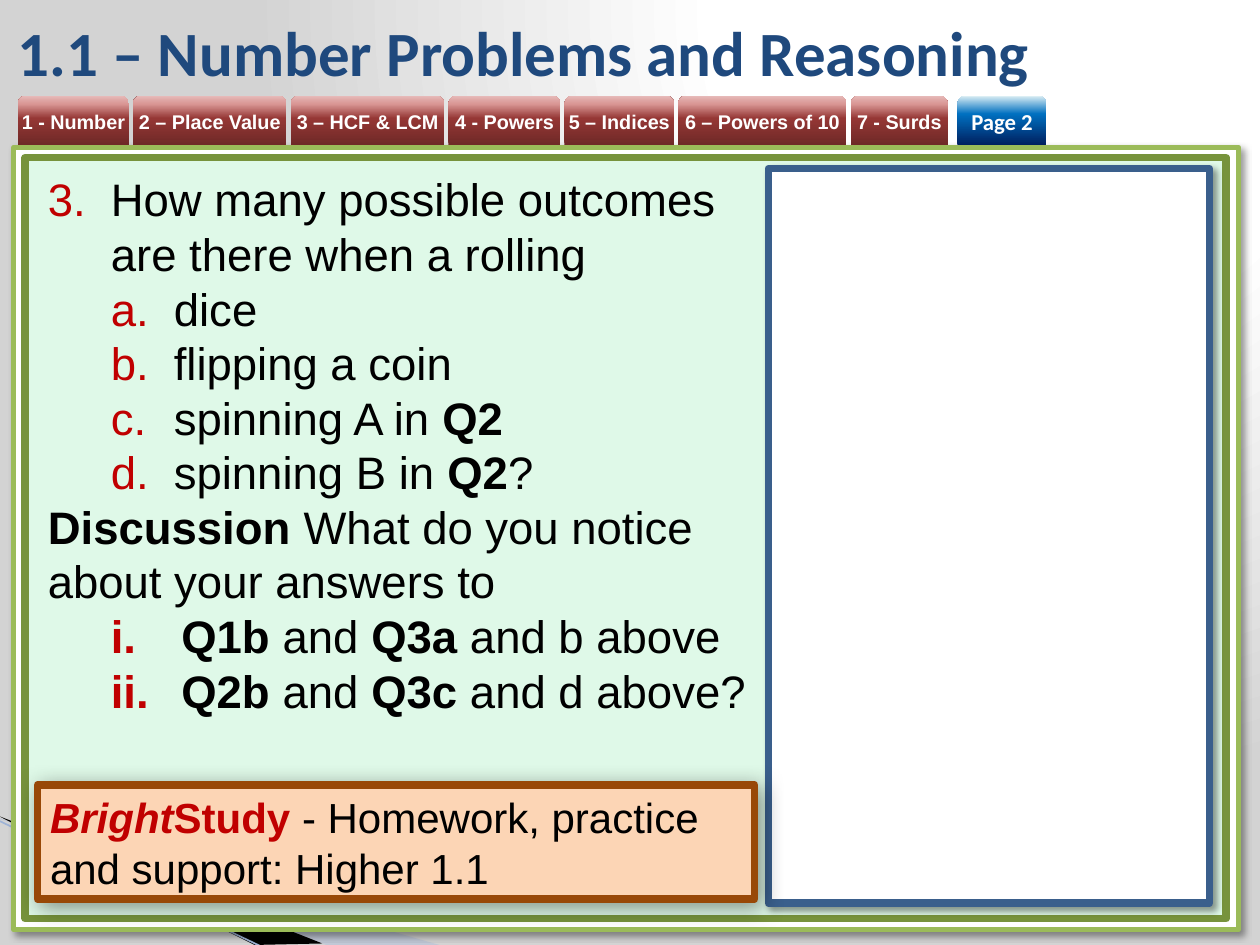
from lxml.etree import SubElement
from pptx import Presentation
from pptx.dml.color import RGBColor
from pptx.enum.shapes import MSO_CONNECTOR, MSO_SHAPE
from pptx.enum.text import MSO_ANCHOR, MSO_AUTO_SIZE, PP_ALIGN
from pptx.oxml.ns import qn
from pptx.util import Cm, Pt

WHITE = RGBColor(0xFF, 0xFF, 0xFF)
BLACK = RGBColor(0x00, 0x00, 0x00)
NAVY = RGBColor(0x1F, 0x49, 0x7D)
RED = RGBColor(0xC0, 0x00, 0x00)
LIME = RGBColor(0x9B, 0xBB, 0x59)
OLIVE = RGBColor(0x77, 0x93, 0x3C)
MINT = RGBColor(0xDF, 0xF9, 0xE8)
STEEL = RGBColor(0x3A, 0x5F, 0x8C)
PEACH = RGBColor(0xFC, 0xD5, 0xB5)
BROWN = RGBColor(0x98, 0x48, 0x07)
PALE_BLUE = RGBColor(0xA7, 0xB9, 0xDB)
LINE_BLUE = RGBColor(0x9E, 0xB3, 0xD6)
GREY = RGBColor(0xD3, 0xD3, 0xD3)
BACKDROP = [(0, WHITE), (40, WHITE), (100, GREY)]
RED_TAB = [(0, RGBColor(0x6F, 0x29, 0x27)), (54, RGBColor(0x95, 0x37, 0x35)),
           (83, RGBColor(0xD9, 0x96, 0x94)), (100, RGBColor(0xE6, 0xB9, 0xB8))]
BLUE_TAB = [(0, RGBColor(0x00, 0x20, 0x60)), (63, RGBColor(0x00, 0x70, 0xC0)),
            (100, RGBColor(0xDB, 0xEE, 0xF4))]

TITLE = "1.1 – Number Problems and Reasoning"
# Label and width in cm
TABS = [("1 - Number", 2.24), ("2 – Place Value", 3.1), ("3 – HCF & LCM", 3.1),
        ("4 - Powers", 2.26), ("5 – Indices", 2.21), ("6 – Powers of 10", 3.4),
        ("7 - Surds", 1.96)]
TAB_LEFT, TAB_TOP, TAB_HEIGHT, TAB_GAP = 0.36, 1.93, 0.99, 0.08
# Box in cm, fill, line colour, line width, shadow
FRAMES = [((0.28, 2.97, 24.69, 15.77), WHITE, LIME, 3, True),
          ((0.51, 3.18, 24.21, 15.34), MINT, OLIVE, 4.33, False),
          ((15.49, 3.4, 8.89, 14.81), WHITE, STEEL, 4.33, True)]
# List styles: level, left margin and hanging indent in cm, numbering, first number
QUESTION = (0, 1.27, 1.27, "arabicPeriod", 3)
PART = (1, 2.54, 1.27, "alphaLcPeriod", 1)
ROMAN = (1, 2.69, 1.42, "romanLcPeriod", 1)
PLAIN = (0, 0, 0, None, None)
# Style, then runs as (text, bold)
BODY = [
    (QUESTION, [("How many possible outcomes are there when a rolling", False)]),
    (PART, [("dice", False)]),
    (PART, [("flipping a coin", False)]),
    (PART, [("spinning A in ", False), ("Q2", True)]),
    (PART, [("spinning B in ", False), ("Q2", True), ("?", False)]),
    (PLAIN, [("Discussion", True), (" What do you notice about your answers to", False)]),
    (ROMAN, [("Q1b ", True), ("and ", False), ("Q3a", True), (" and b above", False)]),
    (ROMAN, [("Q2b ", True), ("and ", False), ("Q3c", True), (" and d above?", False)]),
]
TAB_STOPS = (2.39, 7.62)
# Text, colour, bold, italic
HOMEWORK = [("Bright", RED, True, True), ("Study ", RED, True, False),
            ("- Homework, practice and support: Higher 1.1", BLACK, False, False)]


def cm_box(box):
    return [Cm(v) for v in box]


def set_gradient(fill, element, stops, focus=None):
    """Fill upwards through the stops, or outwards from a focus rectangle."""
    fill.gradient()
    grad = element.find(".//" + qn("a:gradFill"))
    for child in list(grad):
        grad.remove(child)
    gs_list = SubElement(grad, qn("a:gsLst"))
    for pos, color in stops:
        gs = SubElement(gs_list, qn("a:gs"), pos=str(pos * 1000))
        SubElement(gs, qn("a:srgbClr"), val=str(color))
    if focus:
        way = SubElement(grad, qn("a:path"), {"path": "circle"})
        SubElement(way, qn("a:fillToRect"), {k: str(v * 1000) for k, v in focus.items()})
    else:
        SubElement(grad, qn("a:lin"), ang="16200000", scaled="0")


def add_shadow(sp, blur):
    effects = sp.element.spPr.find(qn("a:effectLst"))
    shadow = SubElement(effects, qn("a:outerShdw"), blurRad=str(Pt(blur)),
                        dist=str(Pt(3)), dir="2700000", algn="tl", rotWithShape="0")
    color = SubElement(shadow, qn("a:srgbClr"), val=str(BLACK))
    SubElement(color, qn("a:alpha"), val="40000")


def add_run(p, text, font, size, color, bold=False, italic=False):
    r = p.add_run()
    r.text = text
    r.font.name, r.font.size = font, Pt(size)
    r.font.bold, r.font.italic = bold, italic
    r.font.color.rgb = color


def add_frame(s, box, fill, line, width):
    sp = s.shapes.add_shape(MSO_SHAPE.RECTANGLE, *cm_box(box))
    sp.shadow.inherit = False
    sp.fill.solid()
    sp.fill.fore_color.rgb = fill
    sp.line.color.rgb = line
    sp.line.width = Pt(width)
    return sp


def add_tab(s, left, width, text, stops, font, size):
    sp = s.shapes.add_shape(MSO_SHAPE.ROUND_2_SAME_RECTANGLE,
                            *cm_box((left, TAB_TOP, width, TAB_HEIGHT)))
    sp.shadow.inherit = False
    set_gradient(sp.fill, sp.element, stops)
    sp.line.fill.background()
    tf = sp.text_frame
    tf.margin_left = tf.margin_right = tf.margin_top = tf.margin_bottom = 0
    tf.vertical_anchor = MSO_ANCHOR.MIDDLE
    tf.paragraphs[0].alignment = PP_ALIGN.CENTER
    add_run(tf.paragraphs[0], text, font, size, WHITE, bold=True)


def add_wedge(s, points, color):
    pts = [cm_box(pt) for pt in points]
    builder = s.shapes.build_freeform(*pts[0])
    builder.add_line_segments(pts[1:], close=True)
    sp = builder.convert_to_shape()
    sp.shadow.inherit = False
    sp.fill.solid()
    sp.fill.fore_color.rgb = color
    sp.line.fill.background()
    return sp


def add_corner(s):
    wedge = add_wedge(s, [(-0.03, 16.51), (8.86, 19.05), (6.58, 19.05), (-0.03, 16.48)],
                      PALE_BLUE)
    color = wedge.element.spPr.find(".//" + qn("a:srgbClr"))
    SubElement(color, qn("a:alpha"), val="40000")
    add_wedge(s, [(0, 16.46), (6.5, 19.02), (5.13, 19.05), (0.03, 16.48)], BLACK)
    cxn = s.shapes.add_connector(MSO_CONNECTOR.STRAIGHT, *cm_box((-0.03, 16.54, 5.31, 19.1)))
    cxn.line.color.rgb = LINE_BLUE
    cxn.line.width = Pt(0.95)
    SubElement(cxn.element.spPr, qn("a:effectLst"))


def place(ph, box, anchor):
    """Move a placeholder to its box and in front of what is drawn so far."""
    ph.left, ph.top, ph.width, ph.height = cm_box(box)
    ph.element.getparent().append(ph.element)
    tf = ph.text_frame
    tf.word_wrap = True
    tf.auto_size = MSO_AUTO_SIZE.NONE
    tf.vertical_anchor = anchor
    return tf


def format_list_item(p, style):
    level, margin, hanging, numbering, start = style
    p.level = level
    p.alignment = PP_ALIGN.LEFT
    p.space_before = Pt(0)
    pPr = p._p.get_or_add_pPr()
    pPr.set("marL", str(Cm(margin)))
    pPr.set("indent", str(-Cm(hanging)))
    if numbering:
        color = SubElement(pPr, qn("a:buClr"))
        SubElement(color, qn("a:srgbClr"), val=str(RED))
        SubElement(pPr, qn("a:buFont"), typeface="+mj-lt")
        SubElement(pPr, qn("a:buAutoNum"), type=numbering, startAt=str(start))
    else:
        SubElement(pPr, qn("a:buNone"))
    tabs = SubElement(pPr, qn("a:tabLst"))
    for pos in TAB_STOPS:
        SubElement(tabs, qn("a:tab"), pos=str(Cm(pos)), algn="l")


def main():
    prs = Presentation()
    prs.slide_width, prs.slide_height = Cm(25.4), Cm(19.05)
    s = prs.slides.add_slide(prs.slide_layouts[1])
    set_gradient(s.background.fill, s.element, BACKDROP, {"l": 65, "t": 0, "r": 0, "b": 98})

    add_corner(s)
    for *look, shadowed in FRAMES:
        frame = add_frame(s, *look)
        if shadowed:
            add_shadow(frame, 4)

    left = TAB_LEFT
    for text, width in TABS:
        add_tab(s, left, width, text, RED_TAB, "Arial", 11.3)
        left += width + TAB_GAP
    add_tab(s, 19.3, 1.8, "Page 2", BLUE_TAB, "Calibri", 13)

    tf = place(s.shapes.title, (0.1, 0.13, 21, 1.8), MSO_ANCHOR.MIDDLE)
    tf.paragraphs[0].alignment = PP_ALIGN.LEFT
    add_run(tf.paragraphs[0], TITLE, "Calibri", 36, NAVY, bold=True)

    tf = place(s.placeholders[1], (0.71, 3.33, 14.6, 12.47), MSO_ANCHOR.TOP)
    for i, (style, runs) in enumerate(BODY):
        p = tf.add_paragraph() if i else tf.paragraphs[0]
        format_list_item(p, style)
        for text, bold in runs:
            add_run(p, text, "Arial", 26, BLACK, bold)

    note = add_frame(s, (0.76, 15.82, 14.45, 2.31), PEACH, BROWN, 4.33)
    add_shadow(note, 13)
    note.text_frame.word_wrap = True
    note.text_frame.vertical_anchor = MSO_ANCHOR.MIDDLE
    p = note.text_frame.paragraphs[0]
    p.alignment = PP_ALIGN.LEFT
    for text, color, bold, italic in HOMEWORK:
        add_run(p, text, "Arial", 24, color, bold, italic)

    prs.save("out.pptx")


if __name__ == "__main__":
    main()
